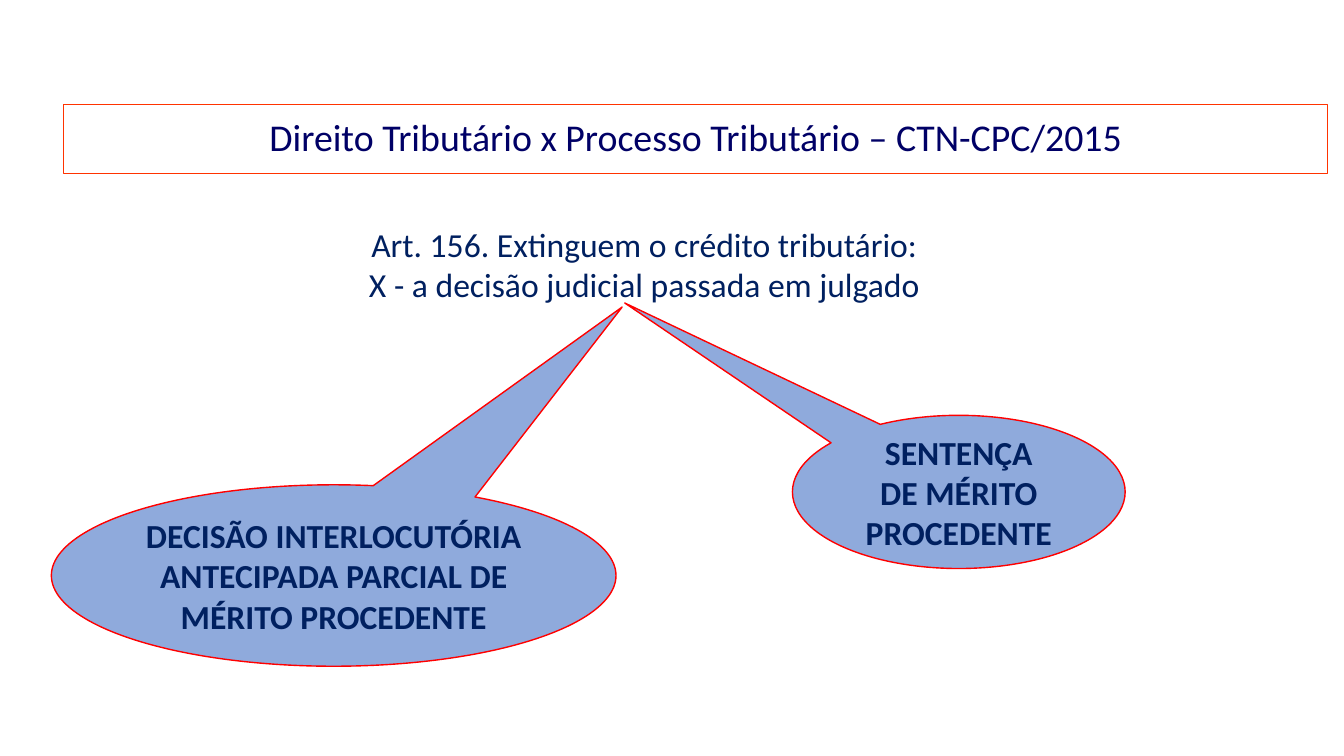
from lxml.etree import SubElement
from pptx import Presentation
from pptx.dml.color import RGBColor
from pptx.enum.shapes import MSO_SHAPE as Shape
from pptx.enum.text import MSO_ANCHOR as Anchor, MSO_AUTO_SIZE as AutoSize, PP_ALIGN as Align
from pptx.oxml.ns import qn
from pptx.util import Inches, Pt

WHITE = RGBColor(0xFF, 0xFF, 0xFF)
TITLE_BLUE = RGBColor(0x00, 0x00, 0x66)
NAVY = RGBColor(0x00, 0x20, 0x60)
BALLOON_BLUE = RGBColor(0x8F, 0xAA, 0xDC)
RED = RGBColor(0xFF, 0x00, 0x00)
ORANGE_RED = RGBColor(0xFF, 0x33, 0x00)


def place(shape, left, top, width, height):
    shape.left, shape.top = Inches(left), Inches(top)
    shape.width, shape.height = Inches(width), Inches(height)


def write(frame, lines, size, color, bold=False):
    """Write centred lines, one paragraph each."""
    frame.word_wrap = True
    for index, line in enumerate(lines):
        paragraph = frame.add_paragraph() if index else frame.paragraphs[0]
        properties = paragraph._p.get_or_add_pPr()
        properties.set("marL", "0")
        properties.set("indent", "0")
        SubElement(properties, qn("a:buNone"))
        paragraph.alignment = Align.CENTER
        paragraph.space_before = Pt(0)
        run = paragraph.add_run()
        run.text = line
        run.font.name = "Calibri"
        run.font.size = Pt(size)
        run.font.bold = bold
        run.font.color.rgb = color


deck = Presentation()
deck.slide_width, deck.slide_height = Inches(13.33), Inches(7.5)
slide = deck.slides.add_slide(deck.slide_layouts[1])

# Framed title
title = slide.shapes.title
place(title, 0.63, 1.04, 12.54, 0.68)
title.line.color.rgb = ORANGE_RED
title.line.width = Pt(0.75)
title.text_frame.auto_size = AutoSize.NONE
title.text_frame.vertical_anchor = Anchor.MIDDLE
write(title.text_frame, ["Direito Tributário x Processo Tributário – CTN-CPC/2015"], 27, TITLE_BLUE)
title.text_frame.paragraphs[0].line_spacing = 0.9

# Article of the tax code
article = slide.placeholders[1]
place(article, 3.19, 2.17, 6.4, 0.91)
article.fill.solid()
article.fill.fore_color.rgb = WHITE
article.text_frame.auto_size = AutoSize.SHAPE_TO_FIT_TEXT
article.text_frame.vertical_anchor = Anchor.TOP
write(article.text_frame, ["Art. 156. Extinguem o crédito tributário:",
                           "X - a decisão judicial passada em julgado"], 24, NAVY)

# Balloons for the two kinds of decision, pointing at the article
decisions = [
    ((7.86, 4.12, 3.3, 1.52), (-1.004, -1.233), ["SENTENÇA", "DE MÉRITO PROCEDENTE"]),
    ((0.51, 4.81, 5.6, 1.8), (0.511, -1.48),
     ["DECISÃO INTERLOCUTÓRIA ANTECIPADA PARCIAL DE MÉRITO PROCEDENTE"]),
]
for box, tip, lines in decisions:
    balloon = slide.shapes.add_shape(Shape.OVAL_CALLOUT, *map(Inches, box))
    balloon.adjustments[0], balloon.adjustments[1] = tip
    balloon.shadow.inherit = False
    balloon.fill.solid()
    balloon.fill.fore_color.rgb = BALLOON_BLUE
    balloon.line.color.rgb = RED
    balloon.line.width = Pt(1)
    balloon.text_frame.vertical_anchor = Anchor.MIDDLE
    write(balloon.text_frame, lines, 24, NAVY, bold=True)

deck.save("out.pptx")
